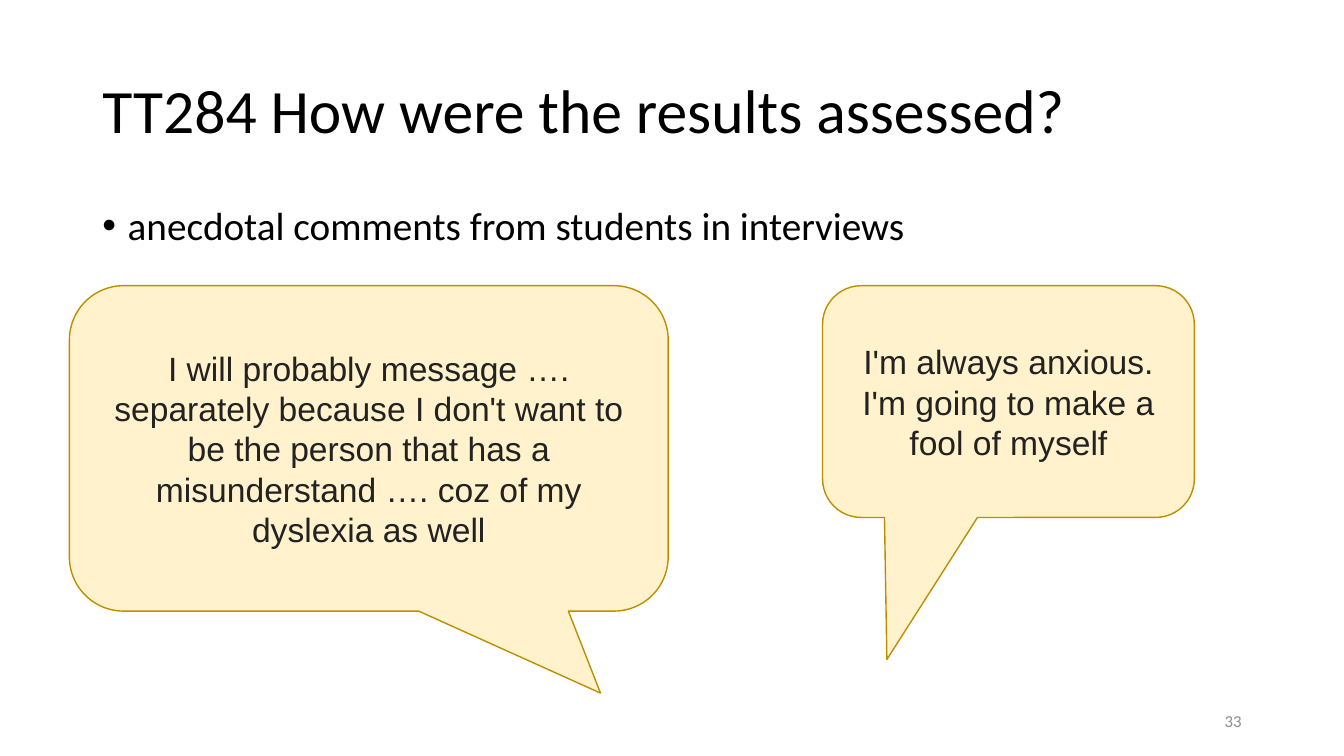
from lxml.etree import SubElement
from pptx import Presentation
from pptx.dml.color import RGBColor
from pptx.enum.shapes import MSO_SHAPE
from pptx.enum.text import MSO_ANCHOR as Anchor, PP_ALIGN as Align
from pptx.oxml.ns import qn
from pptx.util import Cm, Pt

BLACK = RGBColor(0x00, 0x00, 0x00)
CHARCOAL = RGBColor(0x22, 0x22, 0x22)
GREY = RGBColor(0x8C, 0x8C, 0x8C)
CREAM = RGBColor(0xFF, 0xF2, 0xCC)
GOLD = RGBColor(0xBD, 0x8E, 0x00)


def write(shape, text, size, font="Calibri", color=BLACK, align=Align.LEFT,
          anchor=Anchor.MIDDLE, line_spacing=1.0):
    frame = shape.text_frame
    frame.word_wrap = True
    frame.vertical_anchor = anchor
    paragraph = frame.paragraphs[0]
    paragraph.alignment = align
    paragraph.line_spacing = line_spacing
    run = paragraph.add_run()
    run.text = text
    run.font.name = font
    run.font.size = Pt(size)
    run.font.color.rgb = color
    return paragraph


deck = Presentation()
deck.slide_width, deck.slide_height = Cm(33.87), Cm(19.05)
slide = deck.slides.add_slide(deck.slide_layouts[6])

title = slide.shapes.add_textbox(Cm(2.33), Cm(1.01), Cm(29.21), Cm(3.68))
write(title, "TT284 How were the results assessed?", 44, line_spacing=0.9)

evidence = slide.shapes.add_textbox(Cm(2.33), Cm(5.07), Cm(30.2), Cm(12.09))
point = write(evidence, "anecdotal comments from students in interviews", 28,
              anchor=Anchor.TOP, line_spacing=0.9)
point.space_before = Pt(10)
bullet_format = point._p.get_or_add_pPr()
bullet_format.set("marL", str(Cm(0.64)))
bullet_format.set("indent", str(Cm(-0.64)))
SubElement(bullet_format, qn("a:buFont")).set("typeface", "Arial")
SubElement(bullet_format, qn("a:buChar")).set("char", "•")

quotes = [
    ("I'm always anxious. I'm going to make a fool of myself",
     20.73, 9.37, 5.84, (-0.327, 1.113)),
    ("I will probably message …. separately because I don't want to be the "
     "person that has a misunderstand …. coz of my dyslexia as well",
     1.75, 15.09, 8.2, (0.387, 0.752)),
]
for quote, left, width, height, (tip_x, tip_y) in quotes:
    bubble = slide.shapes.add_shape(MSO_SHAPE.ROUNDED_RECTANGULAR_CALLOUT,
                                    Cm(left), Cm(7.2), Cm(width), Cm(height))
    bubble.adjustments[0] = tip_x
    bubble.adjustments[1] = tip_y
    bubble.shadow.inherit = False
    bubble.fill.solid()
    bubble.fill.fore_color.rgb = CREAM
    bubble.line.color.rgb = GOLD
    bubble.line.width = Pt(1)
    write(bubble, quote, 24, font="Arial", color=CHARCOAL, align=Align.CENTER)

page_number = slide.shapes.add_textbox(Cm(23.92), Cm(17.66), Cm(7.62), Cm(1.01))
write(page_number, "33", 12, color=GREY, align=Align.RIGHT)

deck.save("out.pptx")
